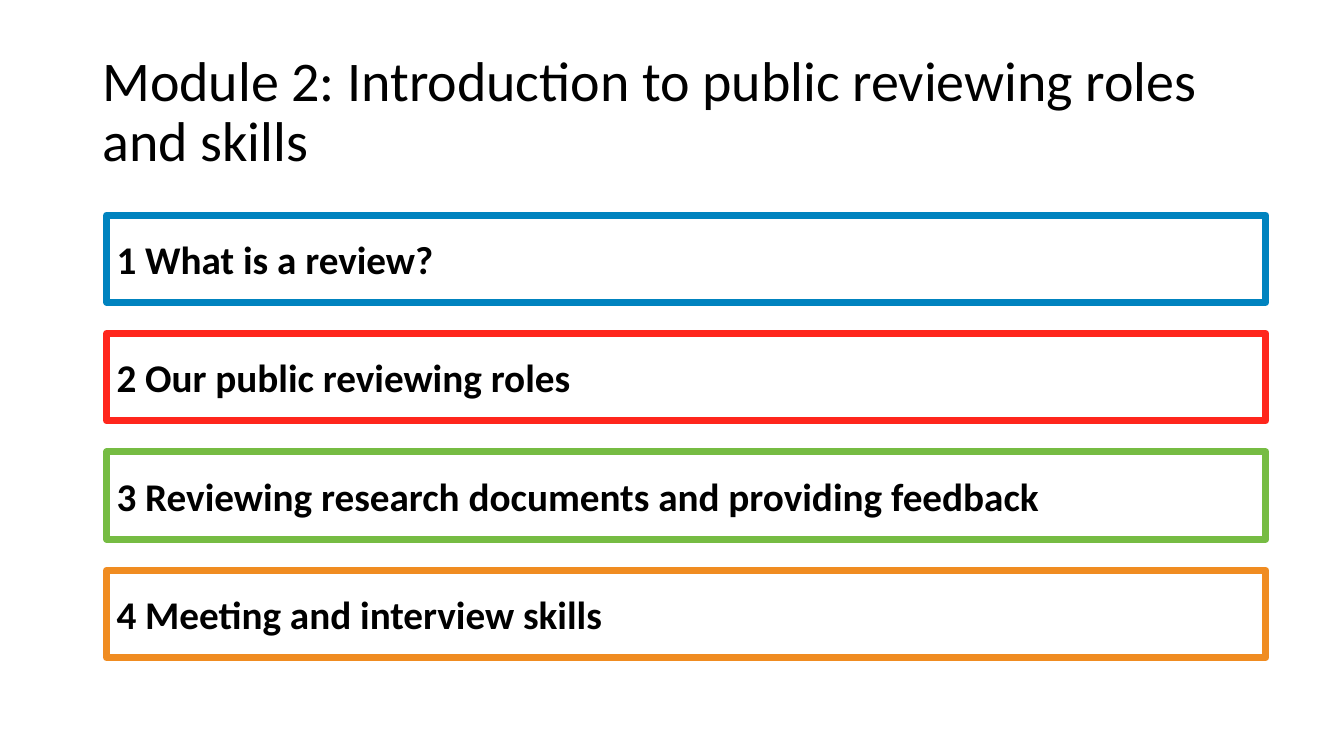
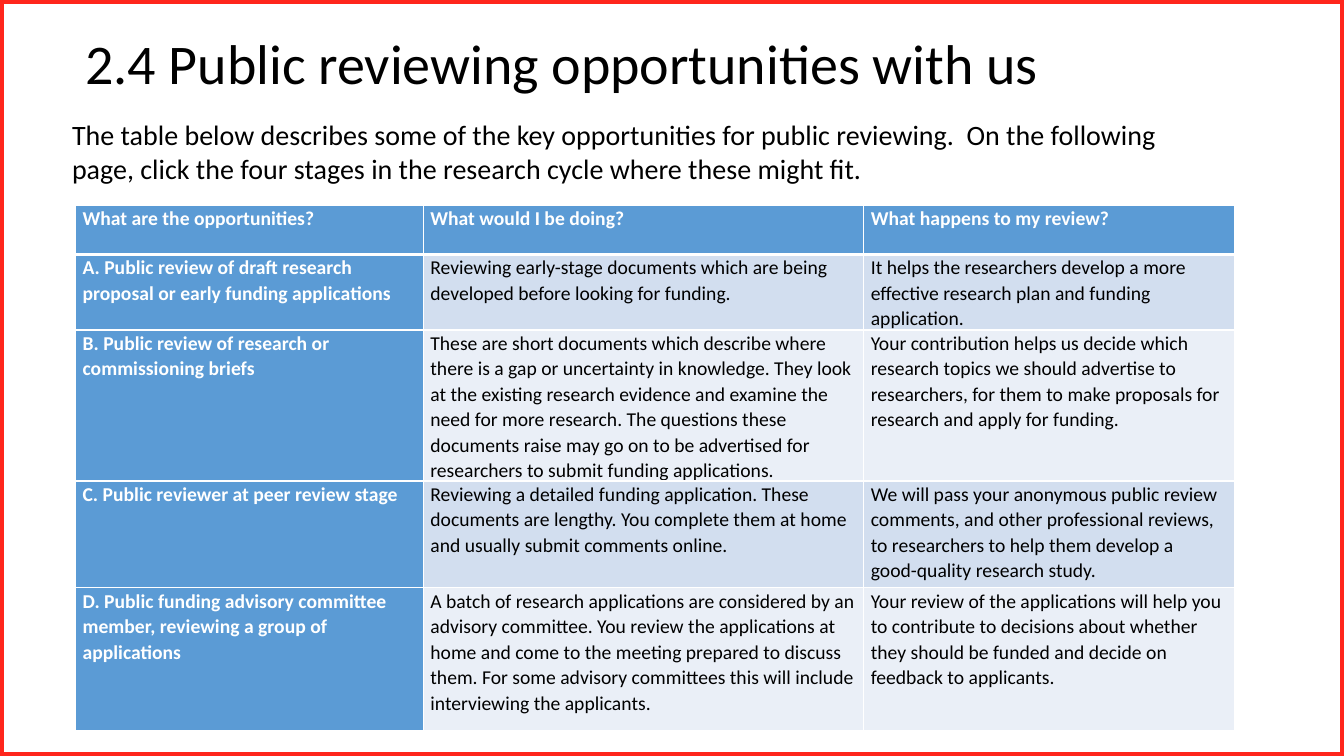
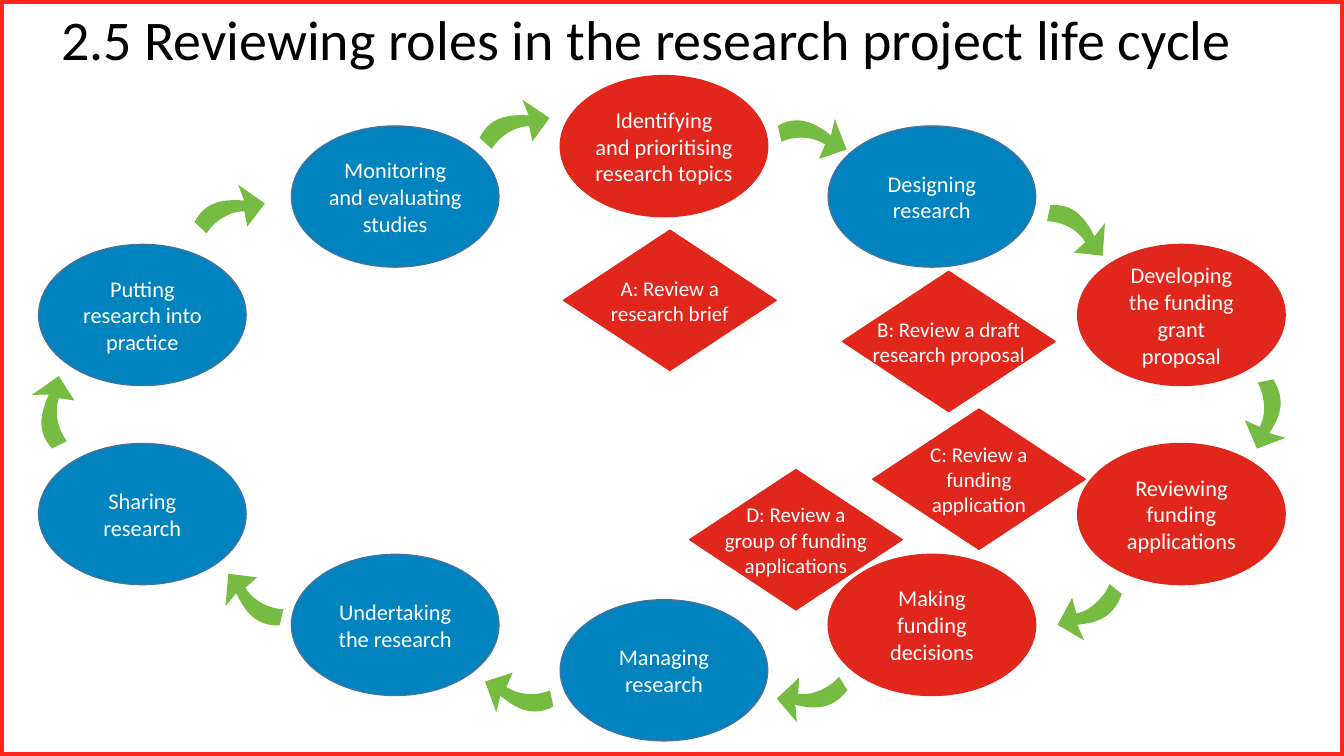
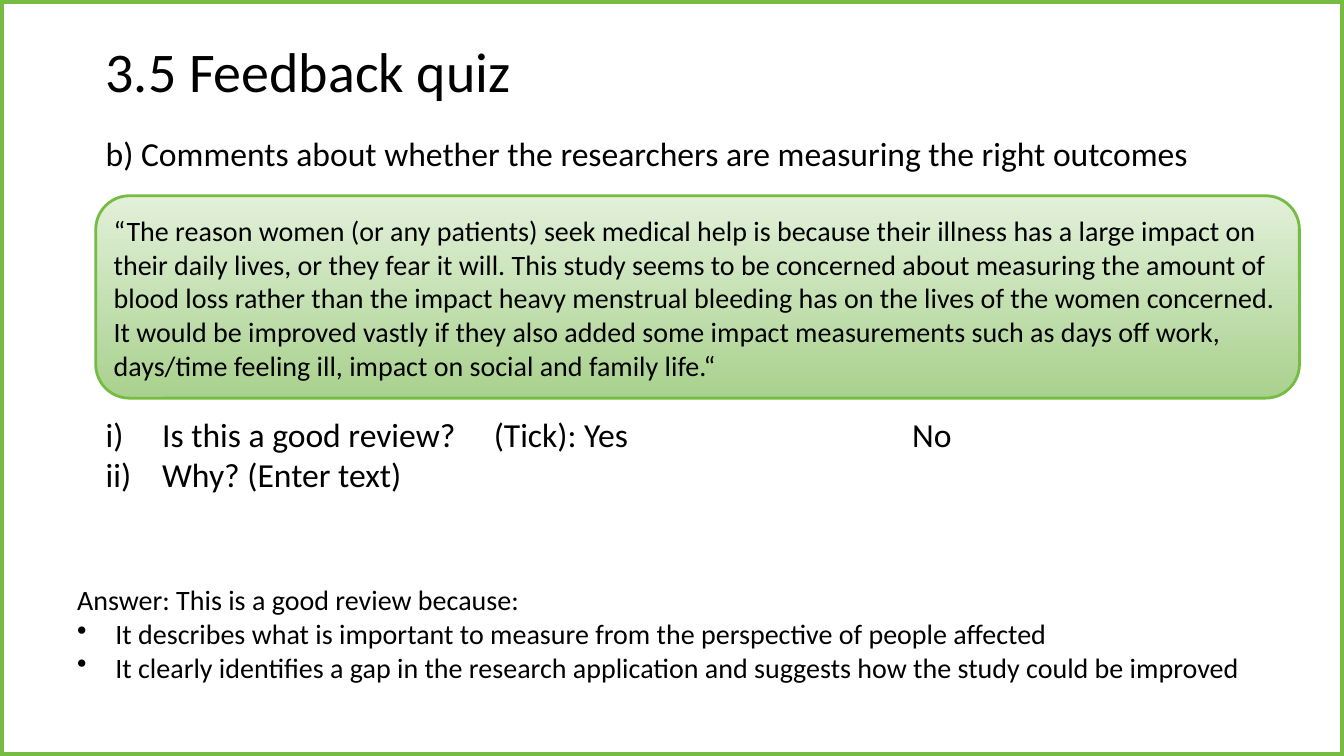
from collections import namedtuple

from lxml.etree import SubElement
from pptx import Presentation
from pptx.dml.color import RGBColor
from pptx.enum.shapes import MSO_SHAPE as Preset
from pptx.enum.text import MSO_ANCHOR as Anchor, PP_ALIGN as Align
from pptx.oxml.ns import qn
from pptx.util import Emu, Inches, Pt

COLUMNS, ROWS = 160, 90
CELL = Inches(7.5) / ROWS
FONT = "Calibri"
BLACK, WHITE = "000000", "FFFFFF"
BLUE, RED, GREEN, ORANGE = "0083BF", "FF261C", "76BC43", "F08C21"
STAGE_RED, STAGE_EDGE = "E1261C", "43739E"
HEADER, BANDS = "5B9BD5", ("EAEFF7", "D2DEEF")
QUOTE_FILL = ("E2F0D9", "A9D18E")

Box = namedtuple("Box", "left top width height")
SLIDE = Box(0, 0, COLUMNS, ROWS)

AGENDA = [
    ("1 What is a review?", BLUE),
    ("2 Our public reviewing roles", RED),
    ("3 Reviewing research documents and providing feedback", GREEN),
    ("4 Meeting and interview skills", ORANGE),
]

COLUMN_SHARES = (0.3, 0.38, 0.32)
ROW_HEIGHTS = (5.9, 8.4, 17, 12.7, 17)
OPPORTUNITIES = [
    ("What are the opportunities?", "What would I be doing?", "What happens to my review?"),
    ("A. Public review of draft research proposal or early funding applications",
     "Reviewing early-stage documents which are being developed before looking for funding.",
     "It helps the researchers develop a more effective research plan and funding application."),
    ("B. Public review of research or commissioning briefs",
     "These are short documents which describe where there is a gap or uncertainty in knowledge. "
     "They look at the existing research evidence and examine the need for more research. "
     "The questions these documents raise may go on to be advertised for researchers to submit "
     "funding applications.",
     "Your contribution helps us decide which research topics we should advertise to researchers, "
     "for them to make proposals for research and apply for funding."),
    ("C. Public reviewer at peer review stage",
     "Reviewing a detailed funding application. These documents are lengthy. "
     "You complete them at home and usually submit comments online.",
     "We will pass your anonymous public review comments, and other professional reviews, "
     "to researchers to help them develop a\vgood-quality research study."),
    ("D. Public funding advisory committee member, reviewing a group of applications",
     "A batch of research applications are considered by an advisory committee. "
     "You review the applications at home and come to the meeting prepared to discuss them. "
     "For some advisory committees this will include interviewing the applicants.",
     "Your review of the applications will help you to contribute to decisions about whether "
     "they should be funded and decide on feedback to applicants."),
]

STAGE_COLUMNS = (4.6, 34.7, 66.7, 98.6, 128.3)
STAGE_ROWS = (9, 15, 29.1, 52.8, 66, 71.4)
NARROW, WIDE = 0.04, 0.1
STAGES = [
    ("Identifying\nand prioritising research topics", 2, 0, STAGE_RED, NARROW),
    ("Designing research", 3, 1, BLUE, WIDE),
    ("Developing the funding grant proposal", 4, 2, STAGE_RED, WIDE),
    ("Reviewing funding applications", 4, 3, STAGE_RED, WIDE),
    ("Making funding decisions", 3, 4, STAGE_RED, WIDE),
    ("Managing research", 2, 5, BLUE, WIDE),
    ("Undertaking the research", 1, 4, BLUE, WIDE),
    ("Sharing research", 0, 3, BLUE, NARROW),
    ("Putting research into practice", 0, 2, BLUE, NARROW),
    ("Monitoring and evaluating studies", 1, 1, BLUE, NARROW),
]
REVIEWS = [
    ("A: Review a\nresearch brief", 67.1, 27.4),
    ("B: Review a draft\nresearch proposal", 100.3, 32.3),
    ("C: Review a\nfunding\napplication", 103.9, 48.7),
    ("D: Review a\ngroup of funding\napplications", 82.1, 55.9),
]
ARROWS = [
    (96.8, 16.3, 323), (128.3, 27.4, 348), (150.7, 49.4, 51), (129.7, 72.7, 102),
    (96.6, 82.8, 121), (61.7, 82.7, 144), (30.1, 71.4, 169), (6.5, 49, 219),
    (27.4, 25.2, 289), (61.3, 15.1, 288),
]
OUTER_CURVE = ((0.12, 0), (0.48, 0.05), (0.66, 0.26), (0.77, 0.66))
ARROW_HEAD = ((1, 0.48), (0.84, 1), (0.35, 0.85))
INNER_CURVE = ((0.59, 0.72), (0.5, 0.48), (0.24, 0.3), (0, 0.25))


def colour(code):
    """Turn a hex string into a colour."""
    return RGBColor.from_string(code)


def cells(count):
    """Turn a number of grid cells into a length."""
    return Emu(round(count * CELL))


def place(box):
    """Turn a grid box into four lengths."""
    return [cells(count) for count in box]


def apply(target, values):
    """Set attributes from a dict of format values."""
    for name, value in values.items():
        setattr(target, name, value)


def write(frame, text, size, ink=BLACK, bold=False, align=Align.LEFT, spacing=1.0):
    """Write one paragraph for each line of text."""
    for index, line in enumerate(text.split("\n")):
        para = frame.paragraphs[0] if index == 0 else frame.add_paragraph()
        para.text = line
        apply(para, {"alignment": align, "line_spacing": spacing})
        for span in para.runs:
            apply(span.font, {"name": FONT, "size": Pt(size), "bold": bold})
            span.font.color.rgb = colour(ink)


def add_text(page, box, text, size, anchor=Anchor.TOP, **style):
    """Add a wrapping text box and return its frame."""
    frame = page.shapes.add_textbox(*place(box)).text_frame
    apply(frame, {"word_wrap": True, "vertical_anchor": anchor})
    write(frame, text, size, **style)
    return frame


def add_title(page, box, text):
    """Add the slide title."""
    add_text(page, box, text, 40, Anchor.MIDDLE, spacing=0.9)


def paint(shape, fill=None, line=None, weight=1):
    """Set the fill and outline of a shape and drop its shadow."""
    shape.shadow.inherit = False
    if fill:
        shape.fill.solid()
        shape.fill.fore_color.rgb = colour(fill)
    else:
        shape.fill.background()
    if line:
        shape.line.color.rgb = colour(line)
        shape.line.width = Pt(weight)
        SubElement(shape.element.spPr.find(qn("a:ln")), qn("a:round"))
    else:
        shape.line.fill.background()


def add_panel(page, preset, box, anchor=Anchor.MIDDLE, pad=(0.1, 0.05), wrap=True, **look):
    """Add a painted preset shape with even padding."""
    shape = page.shapes.add_shape(preset, *place(box))
    paint(shape, **look)
    across, down = map(Inches, pad)
    apply(shape.text_frame, {
        "vertical_anchor": anchor, "word_wrap": wrap,
        "margin_left": across, "margin_right": across,
        "margin_top": down, "margin_bottom": down,
    })
    return shape


def add_frame(page, line):
    """Outline the whole slide in the colour of its module part."""
    add_panel(page, Preset.RECTANGLE, SLIDE, line=line, weight=6)


def add_agenda(page, box, items, gap=3.7):
    """Stack outlined agenda bars with equal gaps."""
    height = (box.height - gap * (len(items) - 1)) / len(items)
    for index, (text, line) in enumerate(items):
        bar = Box(box.left, box.top + index * (height + gap), box.width, height)
        shape = add_panel(page, Preset.RECTANGLE, bar, line=line, weight=5)
        write(shape.text_frame, text, 28, bold=True)


def add_borders(cell, bottom):
    """Draw white borders around a table cell."""
    properties = cell._tc.get_or_add_tcPr()
    for side, weight in (("L", 1), ("R", 1), ("T", 1), ("B", bottom)):
        edge = SubElement(properties, qn(f"a:ln{side}"), w=str(Pt(weight)))
        SubElement(SubElement(edge, qn("a:solidFill")), qn("a:srgbClr"), val=WHITE)


def add_opportunities(page, box, records):
    """Add the table with a header row, a header column and bands."""
    shape = page.shapes.add_table(len(records), len(COLUMN_SHARES), *place(box))
    table = shape.table
    for column, share in zip(table.columns, COLUMN_SHARES):
        column.width = cells(box.width * share)
    for row, height in zip(table.rows, ROW_HEIGHTS):
        row.height = cells(height)
    for row, record in enumerate(records):
        for column, text in enumerate(record):
            cell = table.cell(row, column)
            heading = row == 0 or column == 0
            apply(cell, {"margin_left": Inches(0.07), "margin_right": Inches(0.07),
                         "margin_top": 0, "margin_bottom": 0})
            add_borders(cell, 3 if row == 0 else 1)
            cell.fill.solid()
            cell.fill.fore_color.rgb = colour(HEADER if heading else BANDS[row % 2])
            write(cell.text_frame, text, 14, WHITE if heading else BLACK, heading, spacing=1.07)


def trace(curve, steps=12):
    """Give points along a cubic curve."""
    for step in range(steps + 1):
        t = step / steps
        weights = ((1 - t) ** 3, 3 * t * (1 - t) ** 2, 3 * t * t * (1 - t), t ** 3)
        yield tuple(sum(w * point[axis] for w, point in zip(weights, curve)) for axis in (0, 1))


def add_arrow(page, centre_x, centre_y, turn):
    """Add a curved arrow turned about its centre."""
    width, height = (7.2, 6.7) if 45 <= turn < 135 else (6.7, 7.2)
    left, top = centre_x - width / 2, centre_y - height / 2
    outline = [*trace(OUTER_CURVE), *ARROW_HEAD, *trace(INNER_CURVE)]
    points = [(cells(left + x * width), cells(top + y * height)) for x, y in outline]
    builder = page.shapes.build_freeform(*points[0])
    builder.add_line_segments(points[1:], close=True)
    arrow = builder.convert_to_shape()
    paint(arrow, fill=GREEN)
    arrow.rotation = turn


def add_cycle(page, box):
    """Add the ring of stages, its arrows and the review diamonds."""
    for centre_x, centre_y, turn in ARROWS:
        add_arrow(page, box.left + centre_x, box.top + centre_y, turn)
    for text, left, top in REVIEWS:
        diamond = add_panel(page, Preset.FLOWCHART_DECISION,
                            Box(box.left + left, box.top + top, 25.3, 16.7),
                            pad=(0.08, 0.08), wrap=False, fill=STAGE_RED, line=STAGE_RED)
        write(diamond.text_frame, text, 15, WHITE, align=Align.CENTER)
    for text, column, row, fill, pad in STAGES:
        spot = Box(box.left + STAGE_COLUMNS[column], box.top + STAGE_ROWS[row], 24.7, 16.8)
        stage = add_panel(page, Preset.OVAL, spot, pad=(pad, 0.05), fill=fill,
                          line=STAGE_EDGE if fill == BLUE else fill)
        write(stage.text_frame, text, 16, WHITE, align=Align.CENTER)


def add_quote(page, box, text):
    """Add a rounded quotation with a vertical gradient."""
    quote = add_panel(page, Preset.ROUNDED_RECTANGLE, box, Anchor.TOP, (0.08, 0.08),
                      line=GREEN, weight=2)
    quote.fill.gradient()
    quote.fill.gradient_angle = 270
    for stop, code in zip(quote.fill.gradient_stops, QUOTE_FILL):
        stop.color.rgb = colour(code)
    write(quote.text_frame, text, 20)


def add_marks(paras, indent, tag, tabs=(), **mark):
    """Give paragraphs a hanging indent, a list mark and tab stops."""
    for para in paras:
        properties = para._p.get_or_add_pPr()
        properties.set("marL", str(Inches(indent)))
        properties.set("indent", str(-Inches(indent)))
        SubElement(properties, qn(tag), **mark)
        if tabs:
            stops = SubElement(properties, qn("a:tabLst"))
            for tab in tabs:
                SubElement(stops, qn("a:tab"), pos=str(Inches(tab)), algn="l")


def build_agenda(page):
    """Build the module overview."""
    add_title(page, Box(11, 4.8, 138, 17.4),
              "Module 2: Introduction to public reviewing roles and skills")
    add_agenda(page, Box(12.7, 25.6, 138, 52.7), AGENDA)


def build_opportunities(page):
    """Build the table of reviewing opportunities."""
    add_opportunities(page, Box(9, 24.4, 138, sum(ROW_HEIGHTS)), OPPORTUNITIES)
    add_text(page, Box(7.4, 13.4, 138, 9.2),
             "The table below describes some of the key opportunities for public reviewing.  "
             "On the following page, click the four stages in the research cycle "
             "where these might fit.", 20)
    add_title(page, Box(9, 3.6, 138, 8.7), "2.4 Public reviewing opportunities with us")
    add_frame(page, RED)


def build_cycle(page):
    """Build the research life cycle."""
    add_cycle(page, SLIDE)
    add_title(page, Box(6.1, 0.7, 145, 8.7),
              "2.5 Reviewing roles in the research project life cycle")
    add_frame(page, RED)


def build_quiz(page):
    """Build the feedback quiz."""
    add_title(page, Box(11.4, 2.3, 138, 13.1), "3.5 Feedback quiz")
    add_text(page, Box(11.4, 15.2, 138, 7),
             "b) Comments about whether the researchers are measuring the right outcomes", 24)
    add_quote(page, Box(11.4, 23.3, 143.3, 24.1),
              "“The reason women (or any patients) seek medical help is because their illness has "
              "a large impact on their daily lives, or they fear it will. This study seems to be "
              "concerned about measuring the amount of blood loss rather than the impact heavy "
              "menstrual bleeding has on the lives of the women concerned. It would be improved "
              "vastly if they also added some impact measurements such as days off work, "
              "days/time feeling ill, impact on social and family life.“")
    questions = add_text(page, Box(11.4, 48.7, 140.5, 11.9),
                         "Is this a good review?\t(Tick): Yes\tNo\nWhy? (Enter text)", 24)
    add_marks(questions.paragraphs, 0.56, "a:buAutoNum", (3.85, 8), type="romanLcParenR")
    answer = add_text(page, Box(8, 68.8, 143.9, 17.6),
                      "Answer: This is a good review because:\n"
                      "It describes what is important to measure from the perspective of people "
                      "affected\n"
                      "It clearly identifies a gap in the research application and suggests how "
                      "the study could be improved", 20)
    add_marks(answer.paragraphs[1:], 0.38, "a:buChar", char="•")
    add_frame(page, GREEN)


def main():
    """Build and save the deck."""
    deck = Presentation()
    apply(deck, {"slide_width": cells(COLUMNS), "slide_height": cells(ROWS)})
    for build in (build_agenda, build_opportunities, build_cycle, build_quiz):
        build(deck.slides.add_slide(deck.slide_layouts[6]))
    deck.save("out.pptx")


if __name__ == "__main__":
    main()
